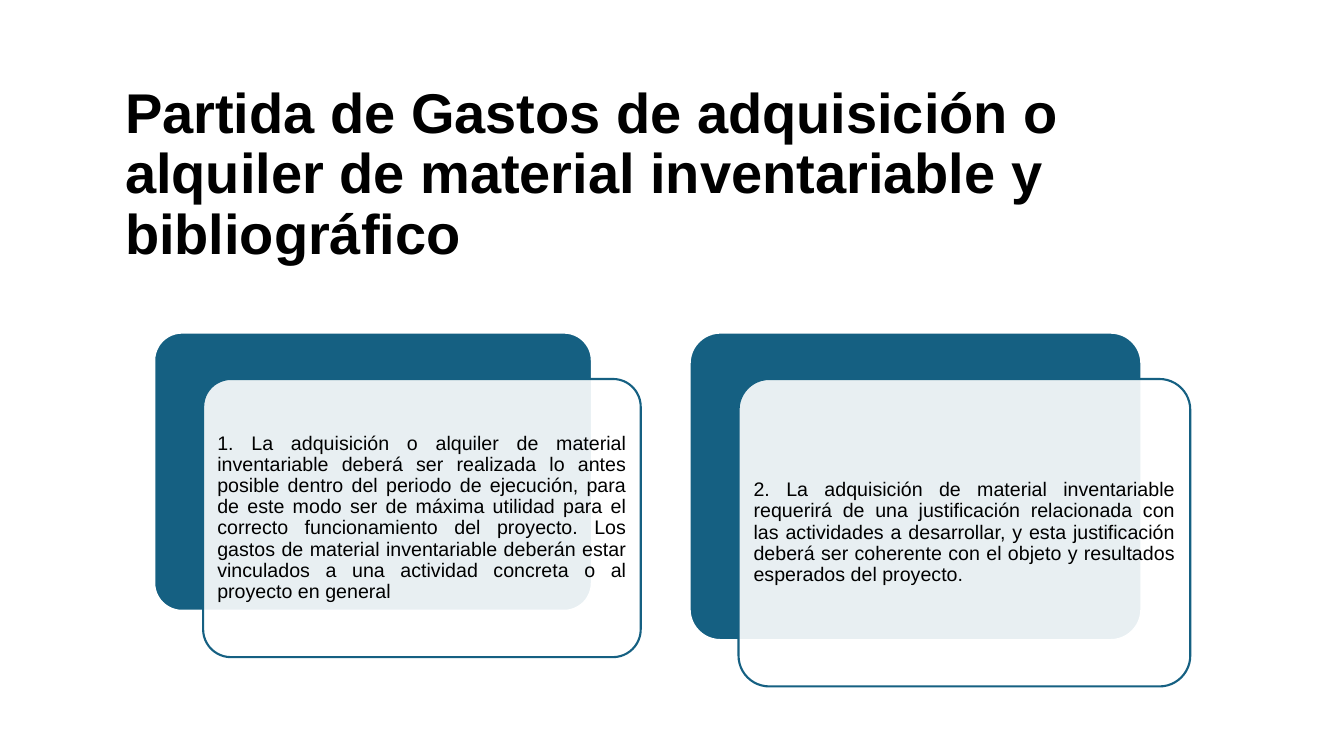
import pptx
import pptx.util
import pptx.dml.color
import pptx.enum.shapes
import pptx.enum.text
from lxml import etree
from pptx.oxml.ns import qn

Inches = pptx.util.Inches
Pt = pptx.util.Pt
ALIGN = pptx.enum.text.PP_ALIGN
COLORS = {"teal": "156082", "white": "FFFFFF", "black": "000000"}


def rgb(name):
    return pptx.dml.color.RGBColor.from_string(COLORS[name])


def write(shape, text, size, bold=False, align=ALIGN.LEFT, inset=0.1):
    """Fill the shape with one middle-anchored paragraph."""
    frame = shape.text_frame
    frame.word_wrap = True
    frame.auto_size = pptx.enum.text.MSO_AUTO_SIZE.NONE
    frame.vertical_anchor = pptx.enum.text.MSO_ANCHOR.MIDDLE
    frame.margin_left = frame.margin_right = Inches(inset)
    frame.margin_top = frame.margin_bottom = Inches(min(inset, 0.06))
    frame.text = text
    paragraph = frame.paragraphs[0]
    paragraph.alignment = align
    paragraph.line_spacing = 0.9
    paragraph.font.name = "Arial"
    paragraph.font.size = Pt(size)
    paragraph.font.bold = bold
    paragraph.font.color.rgb = rgb("black")


deck = pptx.Presentation()
deck.slide_width, deck.slide_height = Inches(13.33), Inches(7.5)
slide = deck.slides.add_slide(deck.slide_layouts[5])

title = slide.shapes.title
title.left, title.top = Inches(1.14), Inches(0.89)
title.width, title.height = Inches(11.13), Inches(1.7)
write(title, "Partida de Gastos de adquisición o alquiler de material "
      "inventariable y bibliográfico", size=40, bold=True)

# Left, width, height and wording of each requirement
requirements = [
    (1.53, 4.34, 2.76,
     "1. La adquisición o alquiler de material inventariable deberá ser "
     "realizada lo antes posible dentro del periodo de ejecución, para de este "
     "modo ser de máxima utilidad para el correcto funcionamiento del proyecto. "
     "Los gastos de material inventariable deberán estar vinculados a una "
     "actividad concreta o al proyecto en general"),
    (6.84, 4.48, 3.05,
     "2. La adquisición de material inventariable requerirá de una "
     "justificación relacionada con las actividades a desarrollar, y esta "
     "justificación deberá ser coherente con el objeto y resultados esperados "
     "del proyecto."),
]
BACK_TOP = 3.3
SHIFT_X, SHIFT_Y = 0.485, 0.46  # offset of the front card from its backing

for left, width, height, wording in requirements:
    for step, fill, line in ((0, "teal", "white"), (1, "white", "teal")):
        card = slide.shapes.add_shape(
            pptx.enum.shapes.MSO_SHAPE.ROUNDED_RECTANGLE,
            Inches(left + step * SHIFT_X), Inches(BACK_TOP + step * SHIFT_Y),
            Inches(width), Inches(height))
        card.adjustments[0] = 0.1
        card.shadow.inherit = False
        card.fill.solid()
        card.fill.fore_color.rgb = rgb(fill)
        card.line.color.rgb = rgb(line)
        card.line.width = Pt(1.5)

    # The front card, drawn last, is slightly see-through and holds the text
    front_color = card.fill._xPr.find(qn("a:solidFill"))[0]
    etree.SubElement(front_color, qn("a:alpha"), val="90000")
    write(card, wording, size=14, align=ALIGN.JUSTIFY, inset=0.06)

deck.save("out.pptx")
